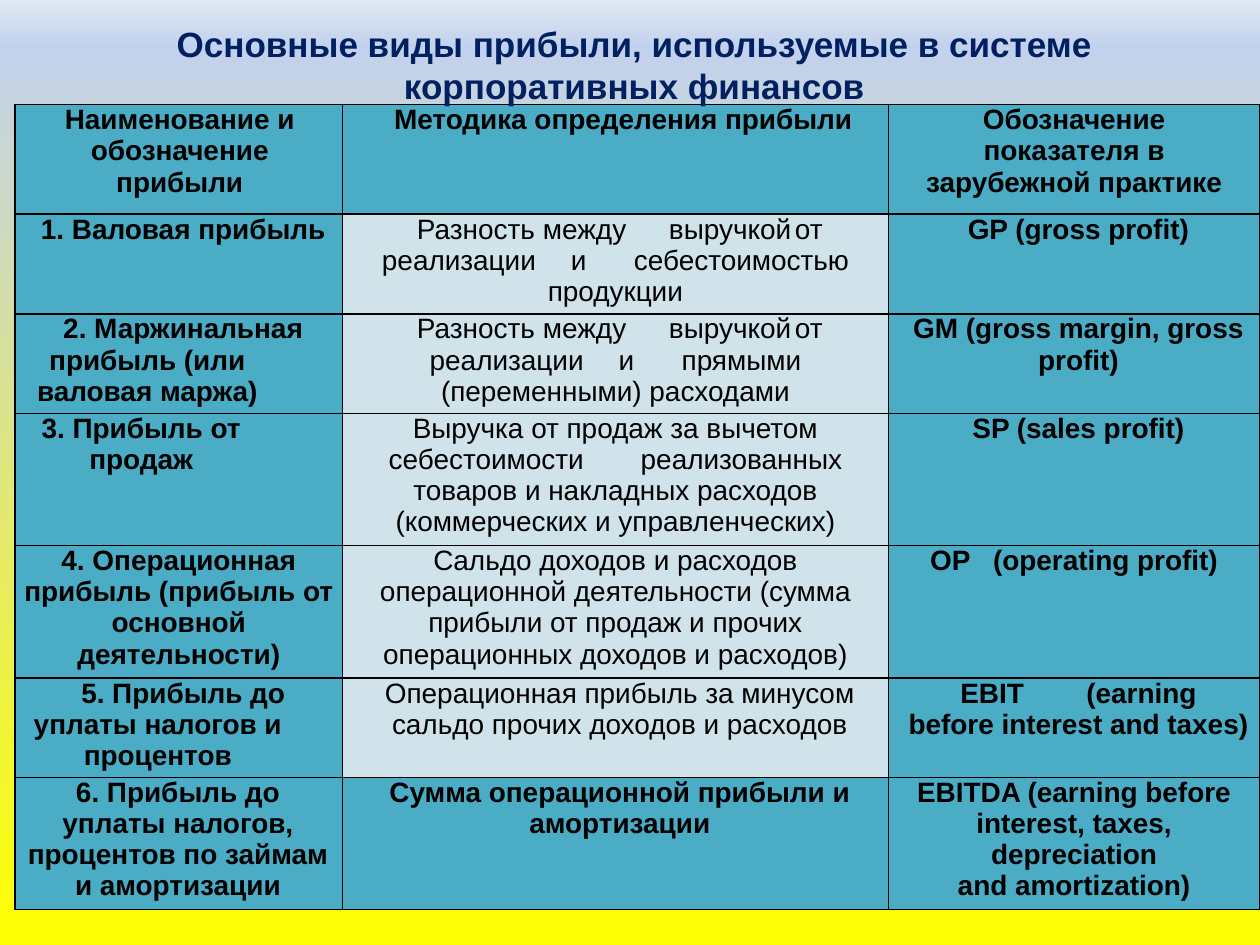
from collections import namedtuple
from copy import deepcopy

from lxml import etree
from pptx import Presentation
from pptx.dml.color import RGBColor
from pptx.enum.text import MSO_ANCHOR, PP_ALIGN
from pptx.oxml.ns import qn
from pptx.util import Pt

CENTER = PP_ALIGN.CENTER
TOP = MSO_ANCHOR.TOP
TITLE_ONLY = 5

COLORS = {
    "title": "002060",
    "text": "000000",
    "border": "000000",
    "accent": "4BACC6",
    "pale": "D0E3EA",
}
BACKGROUND_STOPS = [(0, "FFFF00"), (0.95, "C2D1ED"), (1, "E1E8F5")]
TITLE = "Основные виды прибыли, используемые в системе корпоративных финансов"

COLUMN_WIDTHS = [187.2, 311.8, 212.4]
ROW_HEIGHTS = [62.6, 56.9, 56.9, 75.6, 75.6, 56.9, 75.6]

# Margins, tab stops and spacing are in points.
Para = namedtuple("Para", "text right left tabs before", defaults=(0, 5, (), 0))

REVENUE_GAP = Para("Разность\tмежду\tвыручкой\tот", tabs=(75.6, 132.5, 208))

PROFIT_ROWS = [
    [
        [Para("Наименование и обозначение прибыли", 16, 17)],
        [Para("Методика определения прибыли", left=9)],
        [Para("Обозначение показателя в зарубежной практике", 20, 20)],
    ],
    [
        [Para("1. Валовая прибыль")],
        [REVENUE_GAP,
         Para("реализации\tи\tсебестоимостью продукции", 5, tabs=(95, 123.8), before=0.2)],
        [Para("GP (gross profit)")],
    ],
    [
        [Para("2. Маржинальная"), Para("прибыль (или валовая маржа)", 41, before=0.2)],
        [REVENUE_GAP,
         Para("реализации\tи\tпрямыми (переменными) расходами", 5,
              tabs=(115.9, 165.6), before=0.2)],
        [Para("GM (gross margin, gross profit)")],
    ],
    [
        [Para("3. Прибыль от продаж", 48)],
        [Para("Выручка от продаж за вычетом себестоимости\tреализованных "
              "товаров и накладных расходов", 5, tabs=(131,)),
         Para("(коммерческих и управленческих)", 5)],
        [Para("SP (sales profit)")],
    ],
    [
        [Para("4. Операционная прибыль (прибыль от основной", 5),
         Para("деятельности)", 5)],
        [Para("Cальдо доходов и расходов операционной деятельности (сумма "
              "прибыли от продаж и прочих", 5),
         Para("операционных доходов и расходов)", 5)],
        [Para("OP\t(operating profit)", 5, tabs=(59,))],
    ],
    [
        [Para("5. Прибыль до"), Para("уплаты налогов и процентов", 29, before=0.2)],
        [Para("Операционная прибыль за минусом сальдо прочих доходов и расходов")],
        [Para("EBIT\t(earning", tabs=(69.8,)),
         Para("before interest and taxes)", before=0.2)],
    ],
    [
        [Para("6. Прибыль до уплаты налогов, процентов по займам", 6),
         Para("и амортизации", 6)],
        [Para("Сумма операционной прибыли и амортизации")],
        [Para("EBITDA (earning before interest, taxes, depreciation", 5),
         Para("and amortization)", 5)],
    ],
]


def rgb(name):
    return RGBColor.from_string(COLORS[name])


def style_font(font, size, color, bold):
    font.name = "Arial"
    font.size = Pt(size)
    font.bold = bold
    font.color.rgb = rgb(color)


def paint_background(slide):
    fill = slide.background.fill
    fill.gradient()
    fill.gradient_angle = 90
    stop_list = next(slide._element.iter(qn("a:gsLst")))
    stop_list.append(deepcopy(stop_list[-1]))
    for stop, (position, color) in zip(fill.gradient_stops, BACKGROUND_STOPS):
        stop.position = position
        stop.color.rgb = RGBColor.from_string(color)


def add_title(slide):
    title = slide.shapes.title
    title.left, title.top, title.width, title.height = map(Pt, (25.2, 9.4, 674.6, 55.4))
    frame = title.text_frame
    frame.vertical_anchor = TOP
    frame.word_wrap = True
    frame.text = TITLE
    heading = frame.paragraphs[0]
    heading.alignment = CENTER
    style_font(heading.font, 20, "title", True)
    slide.shapes._spTree.append(title._element)  # in front of the table


def add_borders(cell):
    """Draw the four 1 pt edges; they come before the fill in the cell."""
    properties = cell._tc.get_or_add_tcPr()
    for index, side in enumerate(("lnL", "lnR", "lnT", "lnB")):
        edge = etree.Element(qn(f"a:{side}"), w=str(Pt(1)))
        fill = etree.SubElement(edge, qn("a:solidFill"))
        etree.SubElement(fill, qn("a:srgbClr"), val=COLORS["border"])
        properties.insert(index, edge)


def set_indents(paragraph, content):
    """Set side margins and tab stops; run before the paragraph font is set."""
    properties = paragraph._p.get_or_add_pPr()
    properties.set("marL", str(Pt(content.left)))
    properties.set("marR", str(Pt(content.right)))
    properties.set("indent", "0")
    if content.tabs:
        tab_list = etree.SubElement(properties, qn("a:tabLst"))
        for position in content.tabs:
            etree.SubElement(tab_list, qn("a:tab"), pos=str(Pt(position)), algn="l")


def fill_cell(cell, contents, is_method):
    cell.margin_left = cell.margin_right = cell.margin_top = cell.margin_bottom = 0
    cell.fill.solid()
    cell.fill.fore_color.rgb = rgb("pale" if is_method else "accent")
    add_borders(cell)
    frame = cell.text_frame
    for index, content in enumerate(contents):
        paragraph = frame.add_paragraph() if index else frame.paragraphs[0]
        paragraph.text = content.text
        paragraph.alignment = CENTER
        paragraph.space_before = Pt(content.before)
        set_indents(paragraph, content)
        style_font(paragraph.font, 16, "text", not is_method)


def add_profit_table(slide):
    table = slide.shapes.add_table(
        len(ROW_HEIGHTS), len(COLUMN_WIDTHS), Pt(8.6), Pt(59.8),
        Pt(sum(COLUMN_WIDTHS)), Pt(sum(ROW_HEIGHTS))).table
    table.first_row = table.horz_banding = False
    for column, width in zip(table.columns, COLUMN_WIDTHS):
        column.width = Pt(width)
    last_row = len(PROFIT_ROWS) - 1
    for r, (row, height) in enumerate(zip(PROFIT_ROWS, ROW_HEIGHTS)):
        table.rows[r].height = Pt(height)
        for c, contents in enumerate(row):
            fill_cell(table.cell(r, c), contents, c == 1 and 0 < r < last_row)


def main():
    presentation = Presentation()
    presentation.slide_width, presentation.slide_height = Pt(720), Pt(540)
    slide = presentation.slides.add_slide(presentation.slide_layouts[TITLE_ONLY])
    paint_background(slide)
    add_profit_table(slide)
    add_title(slide)
    presentation.save("out.pptx")


if __name__ == "__main__":
    main()
